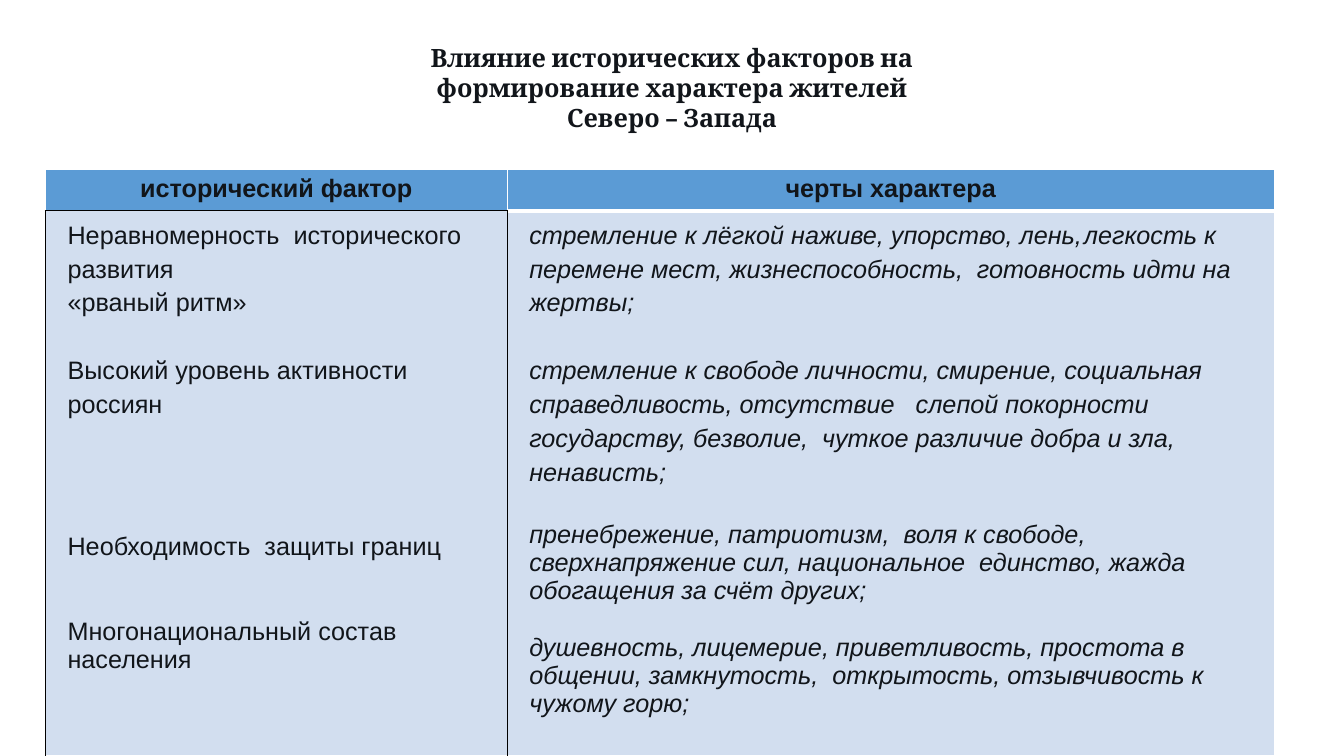
from typing import NamedTuple

from lxml.etree import SubElement
from pptx import Presentation
from pptx.dml.color import RGBColor
from pptx.enum.text import PP_ALIGN
from pptx.oxml.ns import qn
from pptx.util import Inches, Pt

SLIDE_WIDTH, SLIDE_HEIGHT = Inches(13.33), Inches(7.5)
TABLE_LEFT, TABLE_TOP = Inches(0.45), Inches(1.68)
COLUMN_WIDTHS = (Inches(4.58), Inches(7.61))
HEADER_HEIGHT = Inches(0.41)
BODY_HEIGHT = SLIDE_HEIGHT - TABLE_TOP - HEADER_HEIGHT
BODY_INDENT = Inches(0.12)
TAB_POSITION = Inches(5.9)

INK = RGBColor(0x11, 0x15, 0x1A)
HEADER_BLUE = RGBColor(0x5B, 0x9B, 0xD5)
BODY_BLUE = RGBColor(0xD2, 0xDE, 0xEF)
WHITE = RGBColor(0xFF, 0xFF, 0xFF)
BLACK = RGBColor(0, 0, 0)

FONT_SIZE = 18
LINE = 20.25
LOOSE = 1.2
LOOSE_LINE = LINE * LOOSE


class Entry(NamedTuple):
    text: str
    gap: float = 0
    spacing: float = 1.0


class Edge(NamedTuple):
    side: str
    color: RGBColor
    width: float = 1


class Column(NamedTuple):
    header: str
    header_edges: list[Edge]
    entries: list[Entry]
    body_edges: list[Edge]
    italic: bool


TITLE = "Влияние исторических факторов на формирование характера жителей\vСеверо – Запада"

COLUMNS = [
    Column(
        "исторический фактор",
        [Edge("L", WHITE), Edge("R", WHITE), Edge("T", WHITE), Edge("B", BLACK)],
        [
            Entry("Неравномерность  исторического  развития", spacing=LOOSE),
            Entry("«рваный ритм»", spacing=LOOSE),
            Entry("Высокий уровень активности россиян", LOOSE_LINE, LOOSE),
            Entry("Необходимость  защиты границ", 4 * LINE),
            Entry("Многонациональный состав населения", 2 * LINE),
        ],
        [Edge("L", BLACK), Edge("R", BLACK), Edge("T", BLACK)],
        italic=False,
    ),
    Column(
        "черты характера",
        [Edge("L", WHITE), Edge("R", WHITE), Edge("T", WHITE), Edge("B", WHITE, 3)],
        [
            Entry("стремление к лёгкой наживе, упорство, лень,\tлегкость к перемене мест, "
                  "жизнеспособность,  готовность идти на жертвы;", spacing=LOOSE),
            Entry("стремление к свободе личности, смирение, социальная справедливость, "
                  "отсутствие   слепой покорности государству, безволие,  чуткое различие "
                  "добра и зла, ненависть;", LOOSE_LINE, LOOSE),
            Entry("пренебрежение, патриотизм,  воля к свободе, сверхнапряжение сил, "
                  "национальное  единство, жажда обогащения за счёт других;", LOOSE_LINE),
            Entry("душевность, лицемерие, приветливость, простота в общении, замкнутость,  "
                  "открытость, отзывчивость к чужому горю;", LINE),
        ],
        [Edge("L", BLACK), Edge("R", WHITE), Edge("T", WHITE, 3)],
        italic=True,
    ),
]


def set_font(paragraph, name: str, bold: bool, italic: bool = False) -> None:
    font = paragraph.font
    font.name, font.size = name, Pt(FONT_SIZE)
    font.bold, font.italic = bold, italic
    font.color.rgb = INK


def style_cell(cell, fill: RGBColor, edges: list[Edge]) -> None:
    properties = cell._tc.get_or_add_tcPr()
    for edge in edges:
        line = SubElement(properties, qn(f"a:ln{edge.side}"), w=str(Pt(edge.width)))
        solid = SubElement(line, qn("a:solidFill"))
        SubElement(solid, qn("a:srgbClr"), val=str(edge.color))
    cell.fill.solid()
    cell.fill.fore_color.rgb = fill


def write_entry(paragraph, entry: Entry, italic: bool) -> None:
    """Write one indented body paragraph; a tab in its text gets a tab stop."""
    properties = paragraph._p.get_or_add_pPr()
    properties.set("marL", str(BODY_INDENT))
    properties.set("indent", "0")
    if "\t" in entry.text:
        tabs = SubElement(properties, qn("a:tabLst"))
        SubElement(tabs, qn("a:tab"), pos=str(TAB_POSITION), algn="l")
    paragraph.line_spacing = entry.spacing
    if entry.gap:
        paragraph.space_before = Pt(entry.gap)
    set_font(paragraph, "Arial", bold=False, italic=italic)
    paragraph.add_run().text = entry.text


def add_title(slide) -> None:
    box = slide.shapes.add_textbox(SLIDE_WIDTH // 4, Inches(0.37), SLIDE_WIDTH // 2, Inches(1.31))
    box.text_frame.word_wrap = True
    paragraph = box.text_frame.paragraphs[0]
    paragraph.text = TITLE
    paragraph.alignment = PP_ALIGN.CENTER
    set_font(paragraph, "Cambria", bold=True)


def add_factor_table(slide) -> None:
    table = slide.shapes.add_table(
        2, len(COLUMNS), TABLE_LEFT, TABLE_TOP, sum(COLUMN_WIDTHS), HEADER_HEIGHT + BODY_HEIGHT
    ).table
    table.rows[0].height, table.rows[1].height = HEADER_HEIGHT, BODY_HEIGHT
    for index, column in enumerate(COLUMNS):
        table.columns[index].width = COLUMN_WIDTHS[index]
        header, body = table.cell(0, index), table.cell(1, index)
        style_cell(header, HEADER_BLUE, column.header_edges)
        style_cell(body, BODY_BLUE, column.body_edges)
        heading = header.text_frame.paragraphs[0]
        heading.text = column.header
        heading.alignment = PP_ALIGN.CENTER
        set_font(heading, "Arial", bold=True)
        for number, entry in enumerate(column.entries):
            frame = body.text_frame
            paragraph = frame.add_paragraph() if number else frame.paragraphs[0]
            write_entry(paragraph, entry, column.italic)


def main() -> None:
    presentation = Presentation()
    presentation.slide_width, presentation.slide_height = SLIDE_WIDTH, SLIDE_HEIGHT
    slide = presentation.slides.add_slide(presentation.slide_layouts[6])
    add_title(slide)
    add_factor_table(slide)
    presentation.save("out.pptx")


if __name__ == "__main__":
    main()
